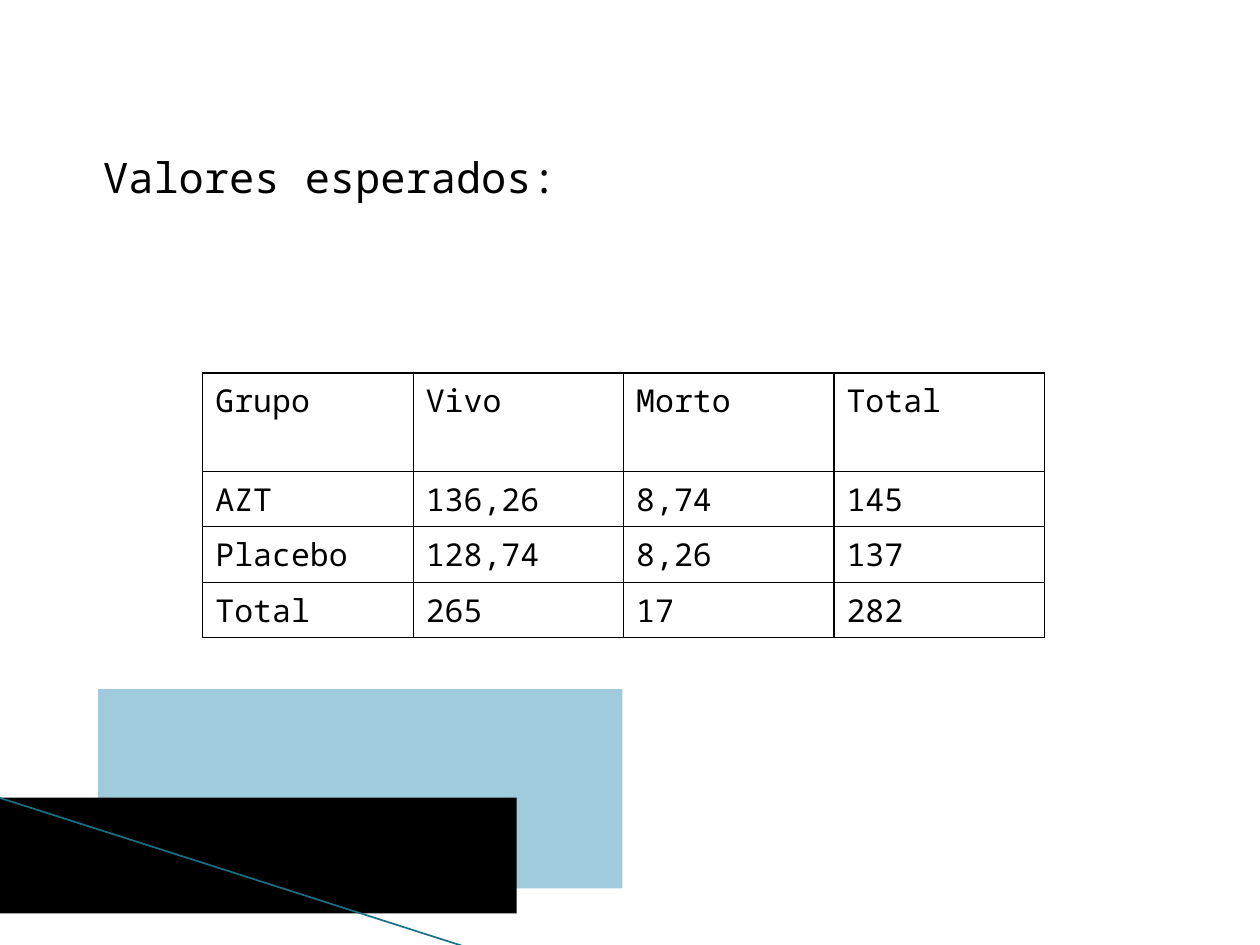
from lxml.etree import SubElement
from pptx import Presentation
from pptx.dml.color import RGBColor
from pptx.enum.shapes import MSO_CONNECTOR, MSO_SHAPE
from pptx.oxml.ns import qn
from pptx.util import Inches, Pt

FONT = "Noto Sans Mono"
BLACK = RGBColor(0x00, 0x00, 0x00)
LIGHT_BLUE = RGBColor(0x9F, 0xCB, 0xDC)
TEAL = RGBColor(0x19, 0x6F, 0x85)

TITLE = "Valores esperados:"
EXPECTED = [
    ("Grupo", "Vivo", "Morto", "Total"),
    ("AZT", "136,26", "8,74", "145"),
    ("Placebo", "128,74", "8,26", "137"),
    ("Total", "265", "17", "282"),
]
BANDS = [  # left, top, width, height, colour
    (0.78, 5.47, 4.16, 1.58, LIGHT_BLUE),
    (-0.06, 6.33, 4.16, 0.92, BLACK),
]
TABLE_LEFT, TABLE_TOP = 1.61, 2.96
COLUMN_WIDTH, HEADER_HEIGHT, ROW_HEIGHT = 1.67, 0.78, 0.44


def write(frame, text, size, color=BLACK):
    para = frame.paragraphs[0]
    span = para.add_run()
    span.text = text
    span.font.name = FONT
    span.font.size = Pt(size)
    span.font.color.rgb = color


def add_band(page, left, top, width, height, color):
    band = page.shapes.add_shape(
        MSO_SHAPE.RECTANGLE, Inches(left), Inches(top), Inches(width), Inches(height))
    band.shadow.inherit = False
    band.fill.solid()
    band.fill.fore_color.rgb = color
    band.line.fill.background()


def add_diagonal(page):
    line = page.shapes.add_connector(
        MSO_CONNECTOR.STRAIGHT, Inches(-0.01), Inches(6.33), Inches(3.71), Inches(7.52))
    line.line.color.rgb = TEAL
    line.line.width = Pt(0.96)
    SubElement(line._element.spPr, qn("a:effectLst"))


def format_cell(cell):
    """Clear the fill and draw a thin border on all four sides."""
    properties = cell._tc.get_or_add_tcPr()
    for side in ("lnL", "lnR", "lnT", "lnB"):
        border = SubElement(properties, qn(f"a:{side}"), w=str(Pt(0.75)))
        fill = SubElement(border, qn("a:solidFill"))
        SubElement(fill, qn("a:srgbClr"), val=str(BLACK))
    cell.fill.background()


def add_expected_table(page):
    row_count, column_count = len(EXPECTED), len(EXPECTED[0])
    table = page.shapes.add_table(
        row_count, column_count, Inches(TABLE_LEFT), Inches(TABLE_TOP),
        Inches(COLUMN_WIDTH * column_count),
        Inches(HEADER_HEIGHT + ROW_HEIGHT * (row_count - 1))).table
    table.first_row = table.horz_banding = False
    for column in table.columns:
        column.width = Inches(COLUMN_WIDTH)
    for r, values in enumerate(EXPECTED):
        table.rows[r].height = Inches(ROW_HEIGHT if r else HEADER_HEIGHT)
        for c, value in enumerate(values):
            cell = table.cell(r, c)
            format_cell(cell)
            write(cell.text_frame, value, size=18)


def main():
    deck = Presentation()
    deck.slide_width, deck.slide_height = Inches(10), Inches(7.5)
    page = deck.slides.add_slide(deck.slide_layouts[6])
    for band in BANDS:
        add_band(page, *band)
    add_diagonal(page)
    add_expected_table(page)
    box = page.shapes.add_textbox(Inches(0.72), Inches(1.15), Inches(3.8), Inches(0.5))
    box.text_frame.word_wrap = False
    write(box.text_frame, TITLE, size=24)
    deck.save("out.pptx")


if __name__ == "__main__":
    main()
